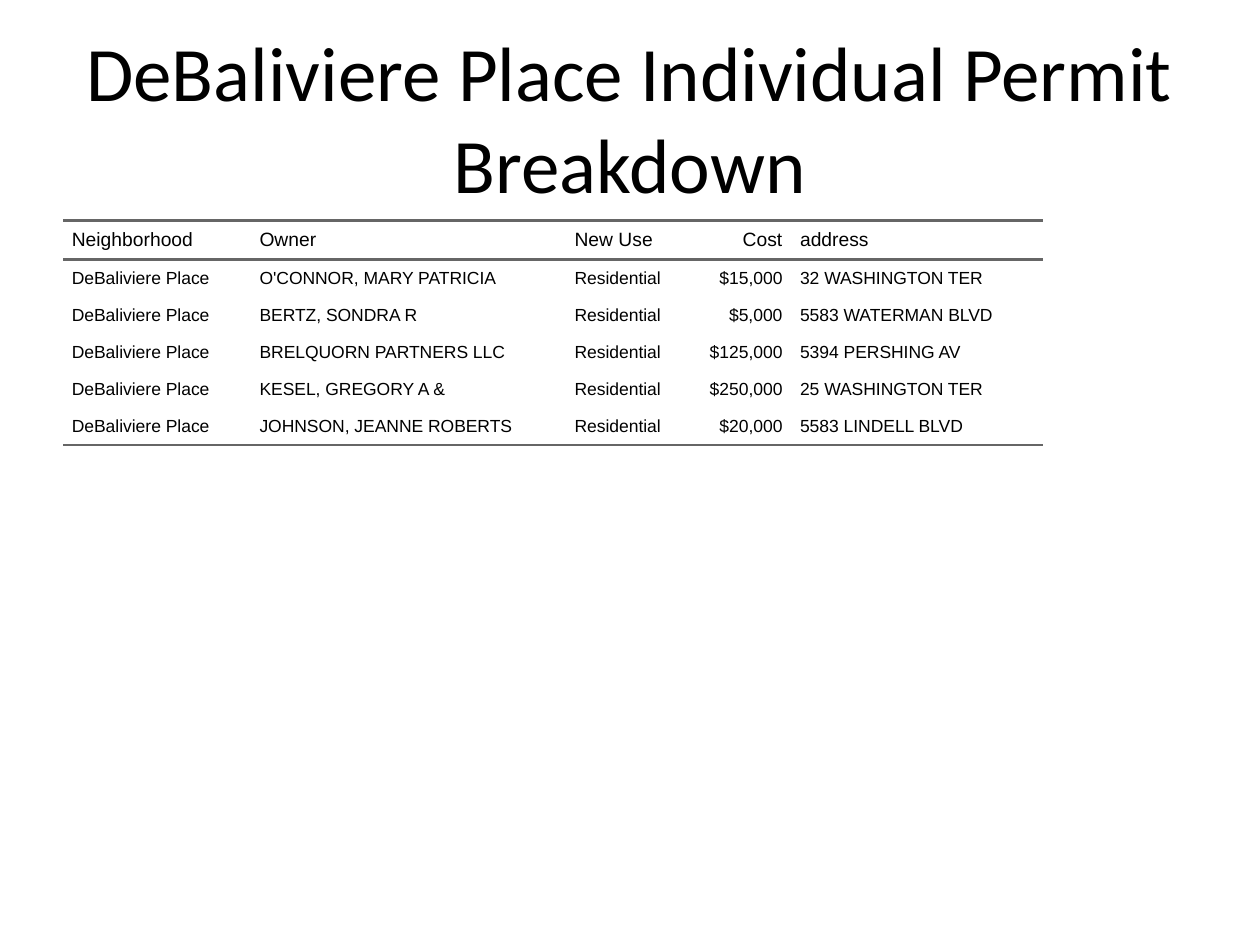
from pptx import Presentation, oxml
from pptx.dml.color import RGBColor
from pptx.enum import text
from pptx.oxml import ns
from pptx.util import Inches, Pt

COLORS = {"text": "000000", "rule": "666666"}
NO_STYLE = "{2D5ABB26-0587-4C30-8999-92F81FD0307C}"


def add_run(paragraph, words, font, size):
    run = paragraph.add_run()
    run.text = words
    run.font.name = font
    run.font.size = Pt(size)
    run.font.color.rgb = RGBColor.from_string(COLORS["text"])


def add_rule(cell, side):
    """Draw a border on one side of a cell: lnT for top, lnB for bottom."""
    properties = cell._tc.get_or_add_tcPr()
    line = oxml.parse_xml(
        f'<a:{side} {ns.nsdecls("a")} w="{Pt(1.5)}"><a:solidFill>'
        f'<a:srgbClr val="{COLORS["rule"]}"/></a:solidFill></a:{side}>')
    # Borders come before the cell fill
    properties.insert(len(properties) - 1, line)


presentation = Presentation()
presentation.slide_width = Inches(10)
presentation.slide_height = Inches(7.5)
slide = presentation.slides.add_slide(presentation.slide_layouts[5])

title = slide.shapes.title
title.left, title.top = Inches(0.5), Inches(0.3)
title.width, title.height = Inches(9), Inches(1.25)
title.text_frame.vertical_anchor = text.MSO_ANCHOR.MIDDLE
title_paragraph = title.text_frame.paragraphs[0]
title_paragraph.alignment = text.PP_ALIGN.CENTER
add_run(title_paragraph, "DeBaliviere Place Individual Permit Breakdown", "Calibri", 44)

permits = [
    ("O'CONNOR, MARY PATRICIA", "$15,000", "32 WASHINGTON TER"),
    ("BERTZ, SONDRA R", "$5,000", "5583 WATERMAN BLVD"),
    ("BRELQUORN PARTNERS LLC", "$125,000", "5394 PERSHING AV"),
    ("KESEL, GREGORY A &", "$250,000", "25 WASHINGTON TER"),
    ("JOHNSON, JEANNE ROBERTS", "$20,000", "5583 LINDELL BLVD"),
]
rows = [("Neighborhood", "Owner", "New Use", "Cost", "address")]
for owner, cost, address in permits:
    rows.append(("DeBaliviere Place", owner, "Residential", cost, address))
column_widths = [1.49, 2.5, 1.04, 0.75, 2]
cost_column = rows[0].index("Cost")
last_row = len(rows) - 1

table = slide.shapes.add_table(
    len(rows), len(column_widths), Inches(0.5), Inches(1.75),
    Inches(sum(column_widths)), Inches(0.25 * len(rows))).table
table.first_row = False
table.horz_banding = False
table._tbl.tblPr.find(ns.qn("a:tableStyleId")).text = NO_STYLE
for column, width in zip(table.columns, column_widths):
    column.width = Inches(width)

for row_index, row in enumerate(rows):
    table.rows[row_index].height = Inches(0.25)
    for column_index, words in enumerate(row):
        cell = table.cell(row_index, column_index)
        cell.vertical_anchor = text.MSO_ANCHOR.MIDDLE
        cell.margin_left = cell.margin_right = 0
        cell.margin_top = cell.margin_bottom = Inches(0.07)
        cell.fill.background()
        if row_index == 0:
            add_rule(cell, "lnT")
        if row_index in (0, last_row):
            add_rule(cell, "lnB")

        paragraph = cell.text_frame.paragraphs[0]
        paragraph.space_before = paragraph.space_after = Pt(5)
        if column_index == cost_column:
            paragraph.alignment = text.PP_ALIGN.RIGHT
        indents = paragraph._p.get_or_add_pPr()
        for side in ("marL", "marR"):
            indents.set(side, str(Inches(0.07)))
        add_run(paragraph, words, "Arial", 11 if row_index == 0 else 10)

presentation.save("out.pptx")
